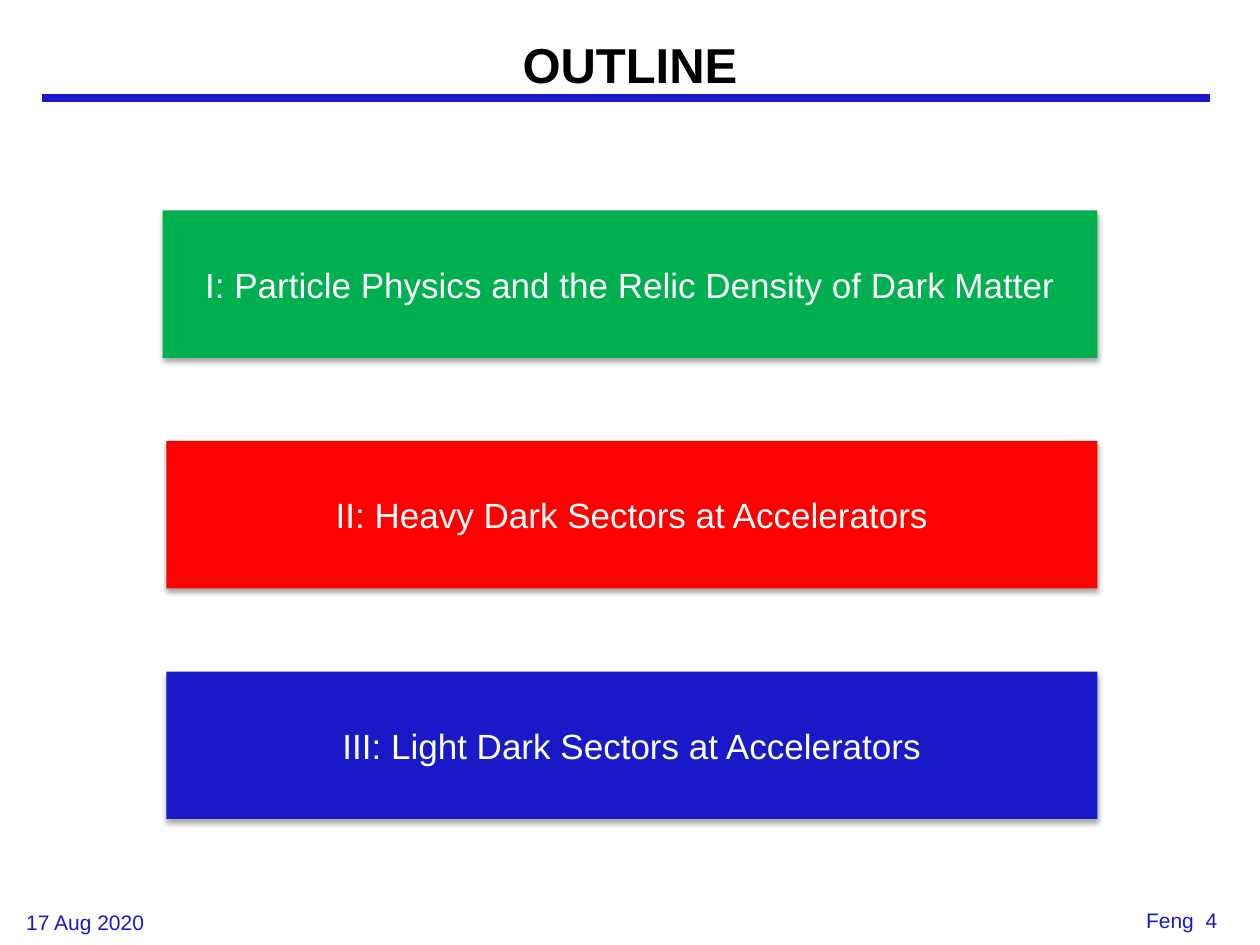
from lxml.etree import SubElement
from pptx import Presentation
from pptx.dml.color import RGBColor
from pptx.enum.shapes import MSO_CONNECTOR, MSO_SHAPE
from pptx.enum.text import MSO_ANCHOR, PP_ALIGN
from pptx.oxml.ns import qn
from pptx.util import Inches, Pt

BLACK = RGBColor(0x00, 0x00, 0x00)
WHITE = RGBColor(0xFF, 0xFF, 0xFF)
BLUE = RGBColor(0x19, 0x19, 0xC8)
GREEN = RGBColor(0x00, 0xB0, 0x50)
RED = RGBColor(0xFF, 0x00, 0x00)

SECTIONS = [
    ("I: Particle Physics and the Relic Density of Dark Matter", GREEN, 1.29),
    ("II: Heavy Dark Sectors at Accelerators", RED, 1.32),
    ("III: Light Dark Sectors at Accelerators", BLUE, 1.32),
]


def write_text(sp, text, size, color, bold=False, align=PP_ALIGN.CENTER,
               anchor=MSO_ANCHOR.MIDDLE):
    """Fill a shape with one formatted paragraph."""
    tf = sp.text_frame
    tf.word_wrap = True
    tf.vertical_anchor = anchor
    p = tf.paragraphs[0]
    p.alignment = align
    r = p.add_run()
    r.text = text
    r.font.name = "Arial"
    r.font.size = Pt(size)
    r.font.bold = bold
    r.font.color.rgb = color


def add_soft_shadow(sp):
    """Give a shape a soft shadow that falls straight down."""
    sp.shadow.inherit = False
    effects = sp._element.spPr.find(qn("a:effectLst"))
    shadow = SubElement(effects, qn("a:outerShdw"), blurRad=str(Pt(3.1)),
                        dist=str(Pt(1.8)), dir="5400000", rotWithShape="0")
    color = SubElement(shadow, qn("a:srgbClr"), val=str(BLACK))
    SubElement(color, qn("a:alpha"), val="35000")


def add_header(s, left, top, width, height):
    """Place the title and the rule beneath it."""
    rule = s.shapes.add_connector(MSO_CONNECTOR.STRAIGHT, Inches(0.33), Inches(0.78),
                                  Inches(9.6), Inches(0.78))
    rule.line.color.rgb = BLUE
    rule.line.width = Pt(4.5)
    SubElement(rule._element.spPr, qn("a:effectLst"))
    title = s.shapes.title
    title.left, title.top = Inches(left), Inches(top)
    title.width, title.height = Inches(width), Inches(height)
    write_text(title, "OUTLINE", 28, BLACK, bold=True)


def add_sections(s, right, top, height, pitch):
    """Stack the section bars at an even pitch with a shared right edge."""
    for i, (text, color, left) in enumerate(SECTIONS):
        sp = s.shapes.add_shape(MSO_SHAPE.RECTANGLE, Inches(left), Inches(top + i * pitch),
                                Inches(right - left), Inches(height))
        sp.fill.solid()
        sp.fill.fore_color.rgb = color
        sp.line.fill.background()
        add_soft_shadow(sp)
        write_text(sp, text, 20, WHITE)


def add_footer(s, text, left, top, width, height, align):
    """Place one footer label."""
    box = s.shapes.add_textbox(Inches(left), Inches(top), Inches(width), Inches(height))
    write_text(box, text, 12, BLUE, align=align, anchor=MSO_ANCHOR.TOP)


def main():
    """Build the outline slide."""
    prs = Presentation()
    prs.slide_width, prs.slide_height = Inches(10), Inches(7.5)
    s = prs.slides.add_slide(prs.slide_layouts[5])
    add_header(s, 0.75, 0.11, 8.5, 0.8)
    add_sections(s, right=8.71, top=1.67, height=1.17, pitch=1.83)
    add_footer(s, "17 Aug 2020", 0.11, 7.17, 2.08, 0.31, PP_ALIGN.LEFT)
    add_footer(s, "Feng  4", 7.68, 7.15, 2.08, 0.35, PP_ALIGN.RIGHT)
    prs.save("out.pptx")


if __name__ == "__main__":
    main()
